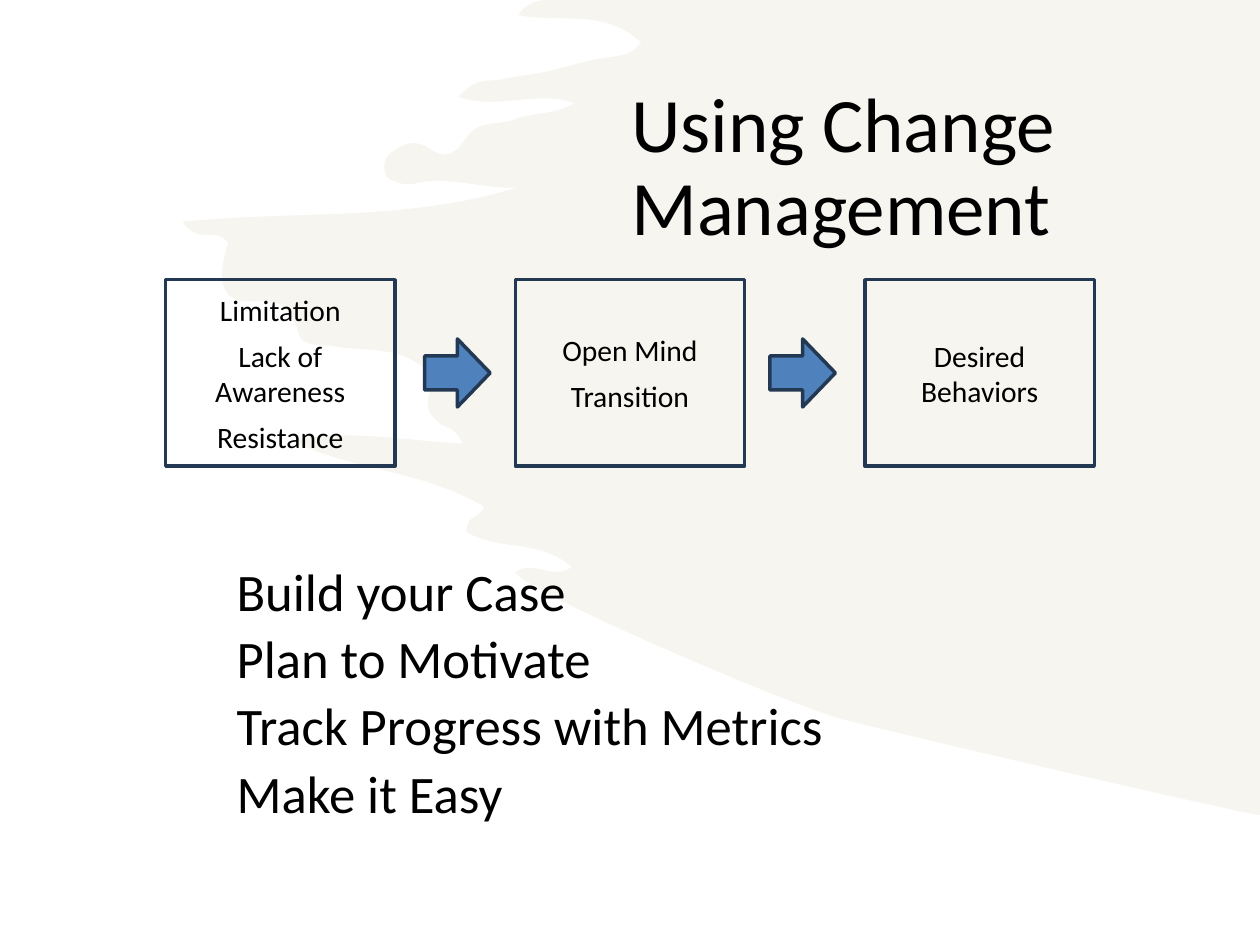
"""Build the change management slide: three stages joined by arrows above a list of actions."""
from lxml import etree
from pptx import Presentation
from pptx.dml.color import RGBColor
from pptx.enum.shapes import MSO_SHAPE
from pptx.enum.text import MSO_ANCHOR, PP_ALIGN
from pptx.oxml.ns import qn
from pptx.util import Pt

PX = 9144
FONT = "Calibri"
BLACK = RGBColor(0x00, 0x00, 0x00)
NAVY = RGBColor(0x23, 0x39, 0x53)
BLUE = RGBColor(0x4F, 0x81, 0xBD)
CREAM = RGBColor(0xEE, 0xEC, 0xE1)
RECTANGLE, ARROW = MSO_SHAPE.RECTANGLE, MSO_SHAPE.RIGHT_ARROW
LEFT, CENTER = PP_ALIGN.LEFT, PP_ALIGN.CENTER
TOP, MIDDLE = MSO_ANCHOR.TOP, MSO_ANCHOR.MIDDLE

TITLE = "Using Change Management"
STAGES = [
    ["Limitation", "Lack of Awareness", "Resistance"],
    ["Open Mind", "Transition"],
    ["Desired Behaviors"],
]
ACTIONS = ["Build your Case", "Plan to Motivate", "Track Progress with Metrics", "Make it Easy"]

PAGE_WIDTH, PAGE_HEIGHT = 1000, 750
STAGE_TOP, STAGE_WIDTH, STAGE_HEIGHT, STAGE_GAP = 222, 182, 148, 95.5
STAGE_PITCH = STAGE_WIDTH + STAGE_GAP
STAGE_LEFT = (PAGE_WIDTH - STAGE_WIDTH - (len(STAGES) - 1) * STAGE_PITCH) / 2
ARROW_LEFT, ARROW_TOP, ARROW_WIDTH, ARROW_HEIGHT = 337, 269, 52, 54
ARROW_PITCH = 274

BRUSH_START = (1000, 0)
BRUSH_EDGE = [
    (432, 0),
    (425, 1, 418, 3, 411, 12), (446, 19, 479, 6, 509, 34),
    (498, 47, 486, 44, 474, 47), (462, 49, 450, 53, 438, 56),
    (425, 59, 412, 60, 399, 63), (388, 65, 377, 61, 364, 77),
    (396, 88, 425, 71, 456, 82), (438, 92, 422, 89, 408, 95),
    (395, 100, 380, 94, 369, 111), (360, 124, 352, 126, 341, 118),
    (331, 111, 321, 113, 312, 120), (308, 123, 305, 126, 305, 132),
    (305, 141, 309, 143, 314, 144), (318, 146, 323, 147, 328, 146),
    (355, 139, 383, 150, 410, 149), (323, 176, 235, 167, 145, 176),
    (157, 195, 172, 179, 181, 193), (172, 222, 176, 237, 193, 239),
    (210, 241, 228, 231, 237, 265), (240, 276, 256, 273, 266, 275),
    (288, 279, 311, 275, 331, 288), (340, 293, 345, 297, 341, 311),
    (337, 325, 342, 330, 349, 336), (354, 340, 362, 339, 367, 352),
    (321, 350, 277, 340, 232, 350), (281, 374, 335, 373, 384, 402),
    (382, 412, 371, 407, 370, 422), (396, 438, 427, 427, 454, 450),
    (438, 461, 424, 444, 409, 454), (414, 469, 630, 561, 669, 571),
    (733, 587, 896, 625, 989, 645),
    (1000, 647),
]


def emu(*lengths):
    return [round(length * PX) for length in lengths]


def bend(shape, segments):
    """Turn the straight segments that have control points into cubic curves."""
    lines = list(shape.element.iter(qn("a:lnTo")))
    for line, segment in zip(lines, segments):
        if len(segment) == 2:
            continue
        curve = etree.Element(qn("a:cubicBezTo"))
        for x, y in zip(emu(*segment[::2]), emu(*segment[1::2])):
            point = etree.SubElement(curve, qn("a:pt"))
            point.set("x", str(x - shape.left))
            point.set("y", str(y - shape.top))
        line.getparent().replace(line, curve)


def write(box, lines, size, align=LEFT, anchor=TOP, spacing=1.0, before=0, after=0):
    frame = box.text_frame
    frame.word_wrap = True
    frame.vertical_anchor = anchor
    for index, line in enumerate(lines):
        para = frame.add_paragraph() if index else frame.paragraphs[0]
        para.text = line
        para.alignment = align
        para.line_spacing = spacing
        para.space_before = Pt(before if index else 0)
        para.space_after = Pt(after)
        para.font.name = FONT
        para.font.size = Pt(size)
        para.font.color.rgb = BLACK


def add_outlined(page, kind, *place, fill=None):
    shape = page.shapes.add_shape(kind, *emu(*place))
    shape.shadow.inherit = False
    if fill is None:
        shape.fill.background()
    else:
        shape.fill.solid()
        shape.fill.fore_color.rgb = fill
    shape.line.color.rgb = NAVY
    shape.line.width = Pt(2)
    return shape


def add_brush(page):
    builder = page.shapes.build_freeform(*emu(*BRUSH_START), scale=1.0)
    builder.add_line_segments([emu(*segment[-2:]) for segment in BRUSH_EDGE], close=True)
    brush = builder.convert_to_shape()
    bend(brush, BRUSH_EDGE)
    brush.shadow.inherit = False
    brush.line.fill.background()
    brush.fill.solid()
    brush.fill.fore_color.rgb = CREAM
    color = brush.element.spPr.find(f"{qn('a:solidFill')}/{qn('a:srgbClr')}")
    etree.SubElement(color, qn("a:alpha")).set("val", "50000")
    return brush


def main():
    deck = Presentation()
    deck.slide_width, deck.slide_height = emu(PAGE_WIDTH, PAGE_HEIGHT)
    page = deck.slides.add_slide(deck.slide_layouts[5])
    brush = add_brush(page)

    title = page.shapes.title
    title.element.addprevious(brush.element)
    title.left, title.top, title.width, title.height = emu(491, 31, 440, 207)
    write(title, [TITLE], 44, anchor=MIDDLE, spacing=0.9)

    for index, lines in enumerate(STAGES):
        stage = add_outlined(page, RECTANGLE, STAGE_LEFT + index * STAGE_PITCH,
                             STAGE_TOP, STAGE_WIDTH, STAGE_HEIGHT)
        write(stage, lines, 16.9, align=CENTER, anchor=MIDDLE, after=6)
    for index in range(len(STAGES) - 1):
        add_outlined(page, ARROW, ARROW_LEFT + index * ARROW_PITCH,
                     ARROW_TOP, ARROW_WIDTH, ARROW_HEIGHT, fill=BLUE)

    actions = page.shapes.add_textbox(*emu(178, 444, 684, 231))
    write(actions, ACTIONS, 30.1, spacing=0.9, before=6)
    deck.save("out.pptx")


if __name__ == "__main__":
    main()
